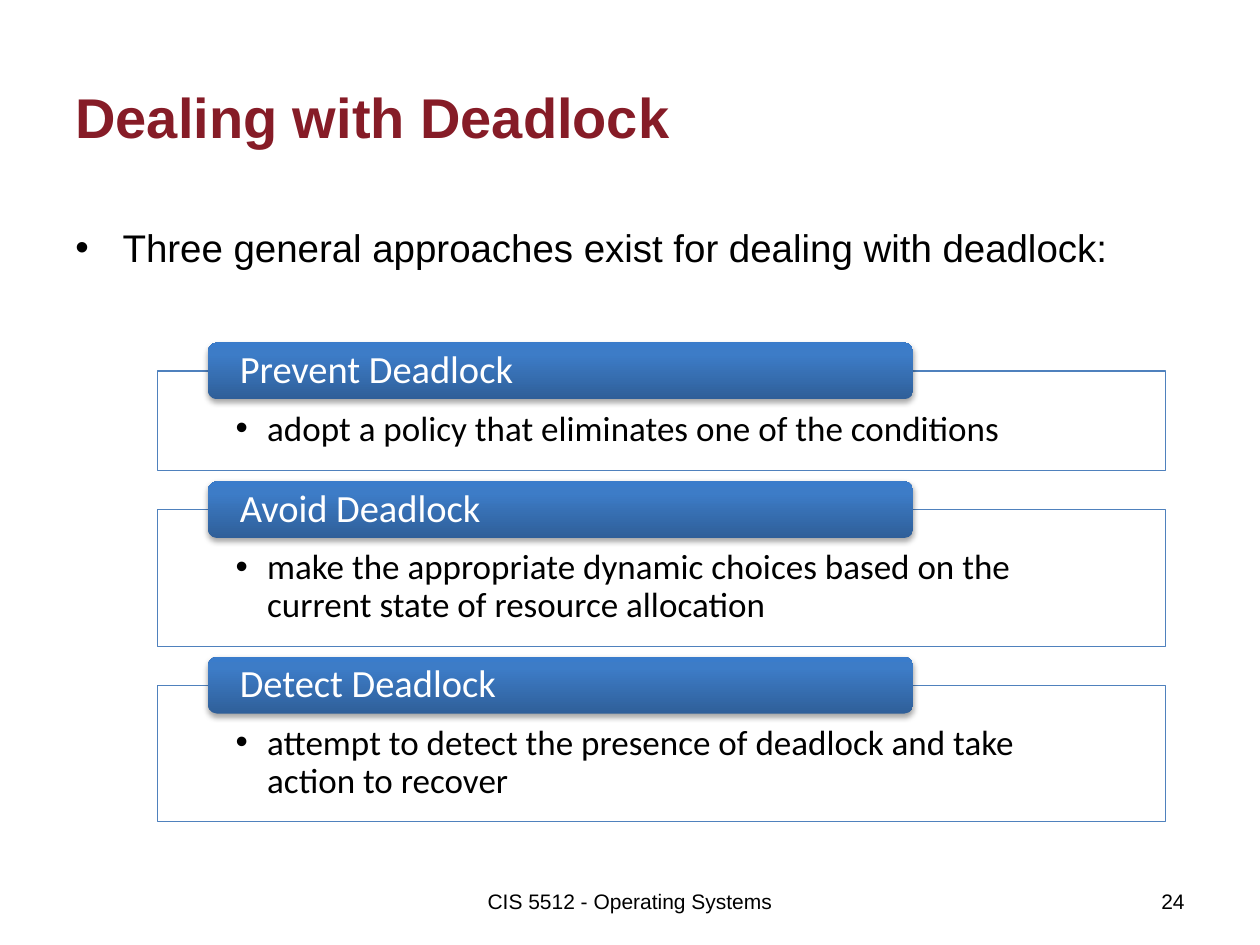
import copy
from dataclasses import dataclass

import pptx
import pptx.dml.color
import pptx.enum.shapes
import pptx.enum.text
import pptx.oxml
import pptx.oxml.ns
import pptx.util
from lxml import etree

Pt = pptx.util.Pt
RGB = pptx.dml.color.RGBColor.from_string
qn = pptx.oxml.ns.qn
SHAPE = pptx.enum.shapes.MSO_SHAPE
ALIGN = pptx.enum.text.PP_ALIGN
ANCHOR = pptx.enum.text.MSO_ANCHOR


@dataclass(frozen=True)
class Theme:
    font: str = "Arial"
    diagram_font: str = "Calibri"
    title: str = "861C27"
    text: str = "000000"
    white: str = "FFFFFF"
    outline: str = "4F81BD"
    gradient: tuple = ((0, "2F5F99"), (0.8, "3D7CC7"), (1, "3A7CCB"))
    title_size: float = 32
    lead_size: float = 22
    detail_size: float = 20
    footer_size: float = 12


@dataclass(frozen=True)
class Approach:
    name: str
    detail: str
    height: float


@dataclass(frozen=True)
class Label:
    text: str
    box: tuple
    size: float
    color: str
    bold: bool = False
    align: ALIGN = ALIGN.LEFT
    anchor: ANCHOR = ANCHOR.MIDDLE
    indent: float = 0


THEME = Theme()
LABELS = (
    Label("Dealing with Deadlock", (36, 21.6, 648, 90), THEME.title_size, THEME.title, bold=True),
    Label("Three general approaches exist for dealing with deadlock:", (36, 124.5, 648, 356.4),
          THEME.lead_size, THEME.text, anchor=ANCHOR.TOP, indent=27),
    Label("CIS 5512 - Operating Systems", (246, 500.4, 228, 28.8),
          THEME.footer_size, THEME.text, align=ALIGN.CENTER),
    Label("24", (516, 500.4, 168, 28.8), THEME.footer_size, THEME.text, align=ALIGN.RIGHT),
)
APPROACHES = (
    Approach("Prevent Deadlock", "adopt a policy that eliminates one of the conditions", 57),
    Approach("Avoid Deadlock", "make the appropriate dynamic choices based on the "
             "current state of resource allocation", 78),
    Approach("Detect Deadlock", "attempt to detect the presence of deadlock and take "
             "action to recover", 78),
)
PANEL_LEFT, PANEL_TOP, PANEL_WIDTH, PANEL_GAP = 90, 212, 576, 22.3
TAB_LEFT, TAB_WIDTH, TAB_HEIGHT, TAB_RISE = 118.8, 403.2, 32.5, 16.3


def set_text(s, text: str, font: str, size: float, color: str, anchor: ANCHOR,
             insets: tuple, align: ALIGN = ALIGN.LEFT, indent: float = 0):
    """Fill a shape with one paragraph, bulleted when it has an indent."""
    tf = s.text_frame
    tf.word_wrap = True
    tf.vertical_anchor = anchor
    tf.margin_left, tf.margin_top, tf.margin_right, tf.margin_bottom = map(Pt, insets)
    tf.text = text
    p = tf.paragraphs[0]
    p.alignment = align
    if indent:
        pPr = p._p.get_or_add_pPr()
        pPr.set("marL", str(Pt(indent)))
        pPr.set("indent", str(-Pt(indent)))
        etree.SubElement(pPr, qn("a:buFont")).set("typeface", "Arial")
        etree.SubElement(pPr, qn("a:buChar")).set("char", "•")
    r = p.runs[0]
    r.font.name = font
    r.font.size = Pt(size)
    r.font.color.rgb = RGB(color)
    return p


def add_label(slide, label: Label) -> None:
    s = slide.shapes.add_textbox(*map(Pt, label.box))
    p = set_text(s, label.text, THEME.font, label.size, label.color, label.anchor,
                 (7.2, 3.6, 7.2, 3.6), label.align, label.indent)
    p.runs[0].font.bold = label.bold


def add_panel(slide, approach: Approach, top: float) -> None:
    s = slide.shapes.add_shape(SHAPE.RECTANGLE, Pt(PANEL_LEFT), Pt(top),
                               Pt(PANEL_WIDTH), Pt(approach.height))
    s.shadow.inherit = False
    s.fill.solid()
    s.fill.fore_color.rgb = RGB(THEME.white)
    fill_color = s._element.spPr.find(qn("a:solidFill"))[0]
    etree.SubElement(fill_color, qn("a:alpha")).set("val", "90000")
    s.line.color.rgb = RGB(THEME.outline)
    s.line.width = Pt(0.75)
    p = set_text(s, approach.detail, THEME.diagram_font, THEME.detail_size, THEME.text,
                 ANCHOR.TOP, (44.7, 22.7, 44.7, 11.4), indent=18)
    p.line_spacing = 0.9


def add_tab(slide, name: str, top: float) -> None:
    s = slide.shapes.add_shape(SHAPE.ROUNDED_RECTANGLE, Pt(TAB_LEFT), Pt(top),
                               Pt(TAB_WIDTH), Pt(TAB_HEIGHT))
    s.line.fill.background()
    s.fill.gradient()
    s.fill.gradient_angle = 90
    stops = s._element.spPr.find(qn("a:gradFill")).find(qn("a:gsLst"))
    stops.append(copy.deepcopy(stops[-1]))
    for stop, (position, color) in zip(s.fill.gradient_stops, THEME.gradient):
        stop.position = position
        stop.color.rgb = RGB(color)
    add_drop_shadow(s)
    p = set_text(s, name, THEME.diagram_font, THEME.lead_size, THEME.white,
                 ANCHOR.MIDDLE, (16.7, 1.6, 16.7, 1.6))
    p.line_spacing = 0.9


def add_drop_shadow(s) -> None:
    s.shadow.inherit = False
    effects = s._element.spPr.find(qn("a:effectLst"))
    shadow = etree.SubElement(effects, qn("a:outerShdw"), blurRad=str(Pt(3.1)),
                              dist=str(Pt(1.8)), dir="5400000", rotWithShape="0")
    color = etree.SubElement(shadow, qn("a:srgbClr"), val=THEME.text)
    etree.SubElement(color, qn("a:alpha"), val="35000")


def main() -> None:
    prs = pptx.Presentation()
    prs.slide_width, prs.slide_height = Pt(720), Pt(540)
    slide = prs.slides.add_slide(prs.slide_layouts[6])
    for label in LABELS:
        add_label(slide, label)
    top = PANEL_TOP
    for approach in APPROACHES:
        add_panel(slide, approach, top)
        add_tab(slide, approach.name, top - TAB_RISE)
        top += approach.height + PANEL_GAP
    prs.save("out.pptx")


if __name__ == "__main__":
    main()
